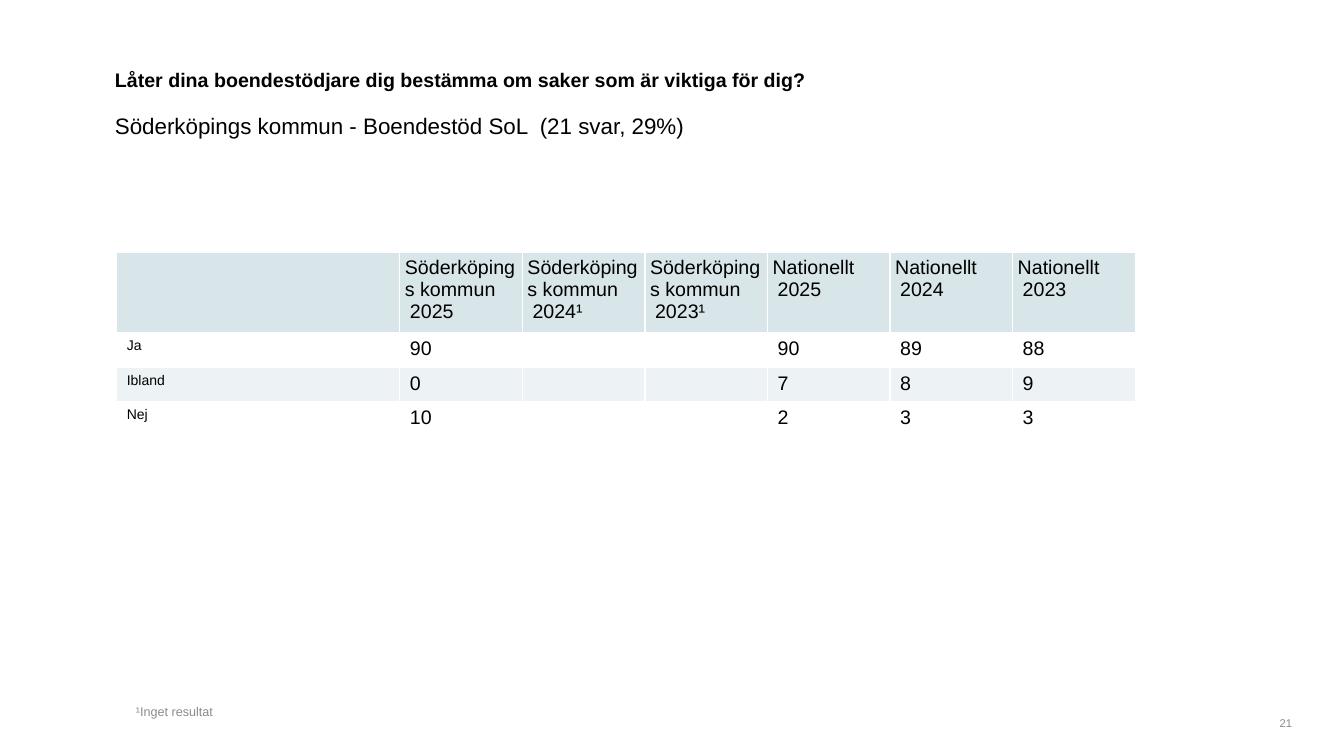
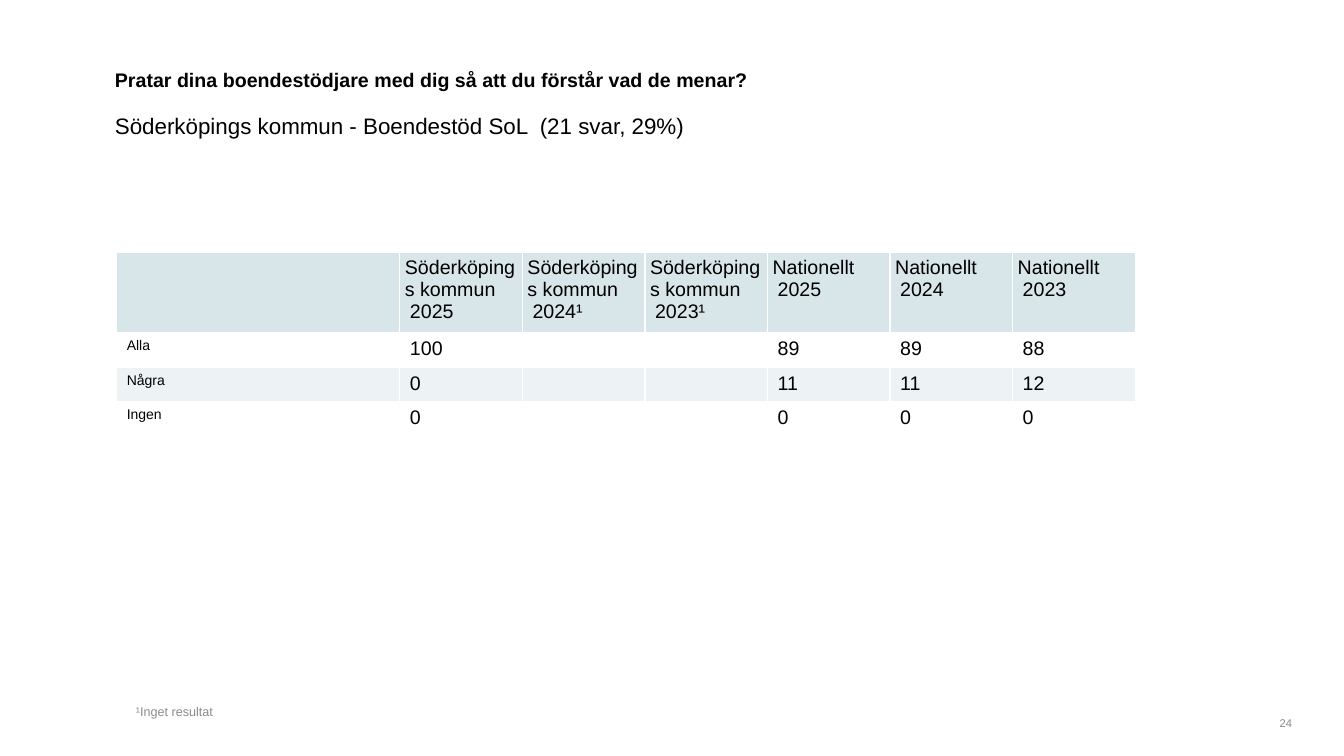
from lxml.etree import SubElement
from pptx import Presentation
from pptx.dml.color import RGBColor
from pptx.enum.text import MSO_ANCHOR, PP_ALIGN
from pptx.oxml.ns import qn
from pptx.util import Inches, Pt

COLUMNS, ROWS = 32, 18
SLIDE_WIDTH, SLIDE_HEIGHT = Inches(13.333), Inches(7.5)
FONT = "Arial"
BLACK, NOTE_GREY, NUMBER_GREY, WHITE = "000000", "8C8C8C", "898989", "FFFFFF"
HEADER_FILL, BAND_FILL = "D9E6E9", "EDF3F4"
CELL_MARGIN = Inches(0.05)

TITLE_BOX = (2.5, 1.5, 27, 1)
SUBTITLE_BOX = (2.5, 2.55, 27, 1)
TABLE_BOX = (2.78, 6, 24.25, 4.4)
NOTE_BOX = (3, 7.75, 18.25, 9.5)
NUMBER_BOX = (30, 17, 1, 0.5)
LABEL_SHARE, HEADER_SHARE = 0.278, 0.437

SUBTITLE = "Söderköpings kommun - Boendestöd SoL  (21 svar, 29%)"
NOTE = "¹Inget resultat"
HEADERS = [
    ("Söderköpings kommun", "2025"),
    ("Söderköpings kommun", "2024¹"),
    ("Söderköpings kommun", "2023¹"),
    ("Nationellt", "2025"),
    ("Nationellt", "2024"),
    ("Nationellt", "2023"),
]
QUESTIONS = [
    (
        "Låter dina boendestödjare dig bestämma om saker som är viktiga för dig?",
        [
            ("Ja", "90", "", "", "90", "89", "88"),
            ("Ibland", "0", "", "", "7", "8", "9"),
            ("Nej", "10", "", "", "2", "3", "3"),
        ],
        "21",
    ),
    (
        "Pratar dina boendestödjare med dig så att du förstår vad de menar?",
        [
            ("Alla", "100", "", "", "89", "89", "88"),
            ("Några", "0", "", "", "11", "11", "12"),
            ("Ingen", "0", "", "", "0", "0", "0"),
        ],
        "24",
    ),
]


def color(value):
    return RGBColor.from_string(value)


def place(box):
    left, top, width, height = box
    column, row = SLIDE_WIDTH / COLUMNS, SLIDE_HEIGHT / ROWS
    return [round(n) for n in (left * column, top * row, width * column, height * row)]


def style(paragraph, size, text_color=BLACK, bold=False):
    font = paragraph.font
    font.name, font.size, font.bold = FONT, Pt(size), bold
    font.color.rgb = color(text_color)


def add_text(slide, box, text, size, text_color=BLACK, bold=False,
             anchor=MSO_ANCHOR.TOP, align=PP_ALIGN.LEFT):
    frame = slide.shapes.add_textbox(*place(box)).text_frame
    frame.word_wrap = True
    frame.vertical_anchor = anchor
    paragraph = frame.paragraphs[0]
    paragraph.text = text
    paragraph.alignment = align
    style(paragraph, size, text_color, bold)


def add_borders(cell):
    properties = cell._tc.get_or_add_tcPr()
    for position, side in enumerate(("lnL", "lnR", "lnT", "lnB")):
        line = SubElement(properties, qn(f"a:{side}"), w=str(Pt(1)))
        fill = SubElement(line, qn("a:solidFill"))
        SubElement(fill, qn("a:srgbClr"), val=WHITE)
        properties.insert(position, line)


def fill_cell(cell, lines, size, background):
    cell.margin_left = cell.margin_right = CELL_MARGIN
    cell.margin_top = cell.margin_bottom = CELL_MARGIN if any(lines) else 0
    if background:
        cell.fill.solid()
        cell.fill.fore_color.rgb = color(background)
    else:
        cell.fill.background()
    add_borders(cell)
    cell.text_frame.text = "\n".join(lines)
    for paragraph in cell.text_frame.paragraphs:
        style(paragraph, size)
    paragraph._p.get_or_add_pPr().set("marL", str(CELL_MARGIN))


def add_answer_table(slide, box, answers):
    left, top, width, height = place(box)
    table = slide.shapes.add_table(
        len(answers) + 1, len(HEADERS) + 1, left, top, width, height).table
    table.first_row = table.horz_banding = False
    for index, column in enumerate(table.columns):
        share = (1 - LABEL_SHARE) / len(HEADERS) if index else LABEL_SHARE
        column.width = round(width * share)
    for index, row in enumerate(table.rows):
        share = (1 - HEADER_SHARE) / len(answers) if index else HEADER_SHARE
        row.height = round(height * share)
    for index, lines in enumerate([("",), *HEADERS]):
        fill_cell(table.cell(0, index), lines, 14, HEADER_FILL)
    for row_index, answer in enumerate(answers, 1):
        background = None if row_index % 2 else BAND_FILL
        for index, text in enumerate(answer):
            size = 14 if index else 10
            fill_cell(table.cell(row_index, index), (text,), size, background)


def add_question_slide(presentation, question, answers, number):
    slide = presentation.slides.add_slide(presentation.slide_layouts[6])
    add_text(slide, TITLE_BOX, question, 14, bold=True)
    add_text(slide, SUBTITLE_BOX, SUBTITLE, 16)
    add_answer_table(slide, TABLE_BOX, answers)
    add_text(slide, NOTE_BOX, NOTE, 9, NOTE_GREY, anchor=MSO_ANCHOR.BOTTOM)
    add_text(slide, NUMBER_BOX, number, 8, NUMBER_GREY,
             anchor=MSO_ANCHOR.BOTTOM, align=PP_ALIGN.RIGHT)


def main():
    presentation = Presentation()
    presentation.slide_width, presentation.slide_height = SLIDE_WIDTH, SLIDE_HEIGHT
    for question, answers, number in QUESTIONS:
        add_question_slide(presentation, question, answers, number)
    presentation.save("out.pptx")


if __name__ == "__main__":
    main()
